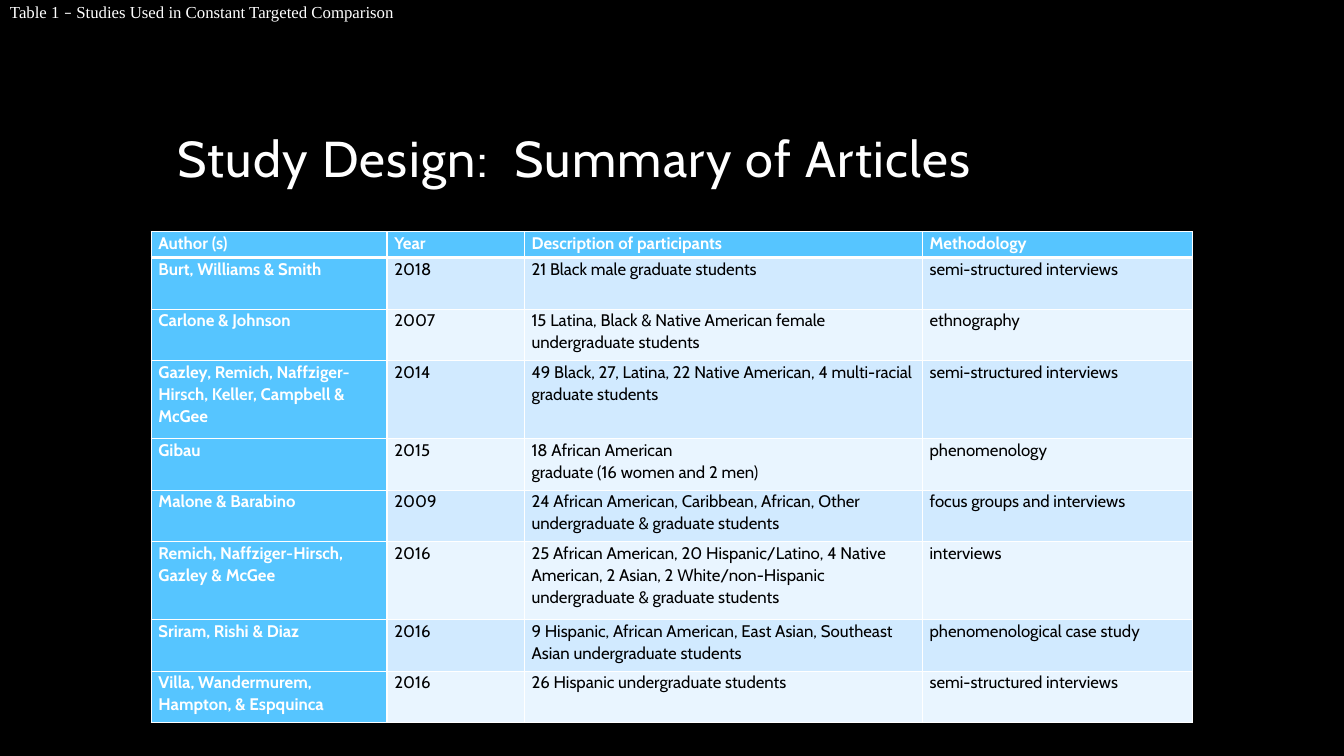
import pptx
import pptx.dml.color
import pptx.enum.text
import pptx.oxml
import pptx.oxml.ns
import pptx.util

Pt = pptx.util.Pt
ANCHOR = pptx.enum.text.MSO_ANCHOR

WHITE, BLACK, BLUE = "FFFFFF", "000000", "56C5FF"
BANDS = ("D1EAFF", "E9F5FF")

COLUMN_WIDTHS = (168.5, 98, 284.4, 193)
SHORT_ROW, TALL_ROW, HEADER_ROW = 36.93, 55.5, 18.5
TALL_ROWS = (3, 6)
STUDIES = (
    ("Author (s)", "Year", "Description of participants", "Methodology"),
    ("Burt, Williams & Smith", "2018", "21 Black male graduate students",
     "semi-structured interviews"),
    ("Carlone & Johnson", "2007",
     "15 Latina, Black & Native American female undergraduate students", "ethnography"),
    ("Gazley, Remich, Naffziger-Hirsch, Keller, Campbell & McGee", "2014",
     "49 Black, 27, Latina, 22 Native American, 4 multi-racial graduate students",
     "semi-structured interviews"),
    ("Gibau", "2015", "18 African American\ngraduate (16 women and 2 men)", "phenomenology"),
    ("Malone & Barabino", "2009",
     "24 African American, Caribbean, African, Other undergraduate & graduate students",
     "focus groups and interviews"),
    ("Remich, Naffziger-Hirsch, Gazley & McGee", "2016",
     "25 African American, 20 Hispanic/Latino, 4 Native American, 2 Asian, "
     "2 White/non-Hispanic undergraduate & graduate students", "interviews"),
    ("Sriram, Rishi & Diaz", "2016",
     "9 Hispanic, African American, East Asian, Southeast Asian undergraduate students",
     "phenomenological case study"),
    ("Villa, Wandermurem, Hampton, & Espquinca", "2016",
     "26 Hispanic undergraduate students", "semi-structured interviews"),
)


def color(hex_string):
    return pptx.dml.color.RGBColor.from_string(hex_string)


def format_run(run, font_name, size, hex_string, bold=False):
    run.font.name = font_name
    run.font.size = Pt(size)
    run.font.bold = bold
    run.font.color.rgb = color(hex_string)


def add_text_frame(slide, box, anchor):
    shape = slide.shapes.add_textbox(*(Pt(length) for length in box))
    text_frame = shape.text_frame
    text_frame.word_wrap = True
    text_frame.vertical_anchor = anchor
    return text_frame


def add_caption(slide, box):
    text_frame = add_text_frame(slide, box, ANCHOR.TOP)
    text_frame.margin_top = Pt(1)
    paragraph = text_frame.paragraphs[0]
    for text, font_name in (("Table 1 ", "Times New Roman"), ("–", "Calibri"),
                            (" Studies Used in Constant Targeted Comparison", "Times New Roman")):
        run = paragraph.add_run()
        run.text = text
        format_run(run, font_name, 12, WHITE)


def add_title(slide, box):
    text_frame = add_text_frame(slide, box, ANCHOR.BOTTOM)
    text_frame.text = "Study Design:  Summary of Articles"
    paragraph = text_frame.paragraphs[0]
    paragraph.line_spacing = 0.9
    run = paragraph.runs[0]
    format_run(run, "Cabin", 36, WHITE)
    run.font._element.set("spc", "100")


def add_borders(cell, top, bottom):
    properties = cell._tc.get_or_add_tcPr()
    for side, width in (("L", 1), ("R", 1), ("T", top), ("B", bottom)):
        properties.append(pptx.oxml.parse_xml(
            f'<a:ln{side} {pptx.oxml.ns.nsdecls("a")} w="{Pt(width)}">'
            f'<a:solidFill><a:srgbClr val="{WHITE}"/></a:solidFill></a:ln{side}>'))


def fill_cell(cell, text, row_index, column_index):
    heading = row_index == 0 or column_index == 0
    # Thick rule below the header row
    add_borders(cell, 3 if row_index == 1 else 1, 3 if row_index == 0 else 1)
    cell.fill.solid()
    cell.fill.fore_color.rgb = color(BLUE if heading else BANDS[(row_index - 1) % 2])
    cell.margin_left = cell.margin_right = Pt(5.2)
    cell.margin_top = cell.margin_bottom = 0
    cell.text_frame.text = text
    for paragraph in cell.text_frame.paragraphs:
        paragraph.line_spacing = 1.07
        format_run(paragraph.runs[0], "Cabin", 12, WHITE if heading else BLACK, heading)


def add_studies_table(slide, box):
    frame = slide.shapes.add_table(len(STUDIES), len(COLUMN_WIDTHS),
                                   *(Pt(length) for length in box))
    table = frame.table
    for column, width in zip(table.columns, COLUMN_WIDTHS):
        column.width = Pt(width)
    for row_index, (row, study) in enumerate(zip(table.rows, STUDIES)):
        height = TALL_ROW if row_index in TALL_ROWS else SHORT_ROW
        row.height = Pt(height if row_index else HEADER_ROW)
        for column_index, text in enumerate(study):
            fill_cell(row.cells[column_index], text, row_index, column_index)


def main():
    presentation = pptx.Presentation()
    presentation.slide_width, presentation.slide_height = Pt(960), Pt(540)
    slide = presentation.slides.add_slide(presentation.slide_layouts[6])
    slide.background.fill.solid()
    slide.background.fill.fore_color.rgb = color(BLACK)

    # Boxes: left, top, width, height
    add_title(slide, (119.5, 30, 720, 108))
    add_studies_table(slide, (108, 165.5, 744, 351))
    add_caption(slide, (0, 0, 960, 36))
    presentation.save("out.pptx")


if __name__ == "__main__":
    main()
